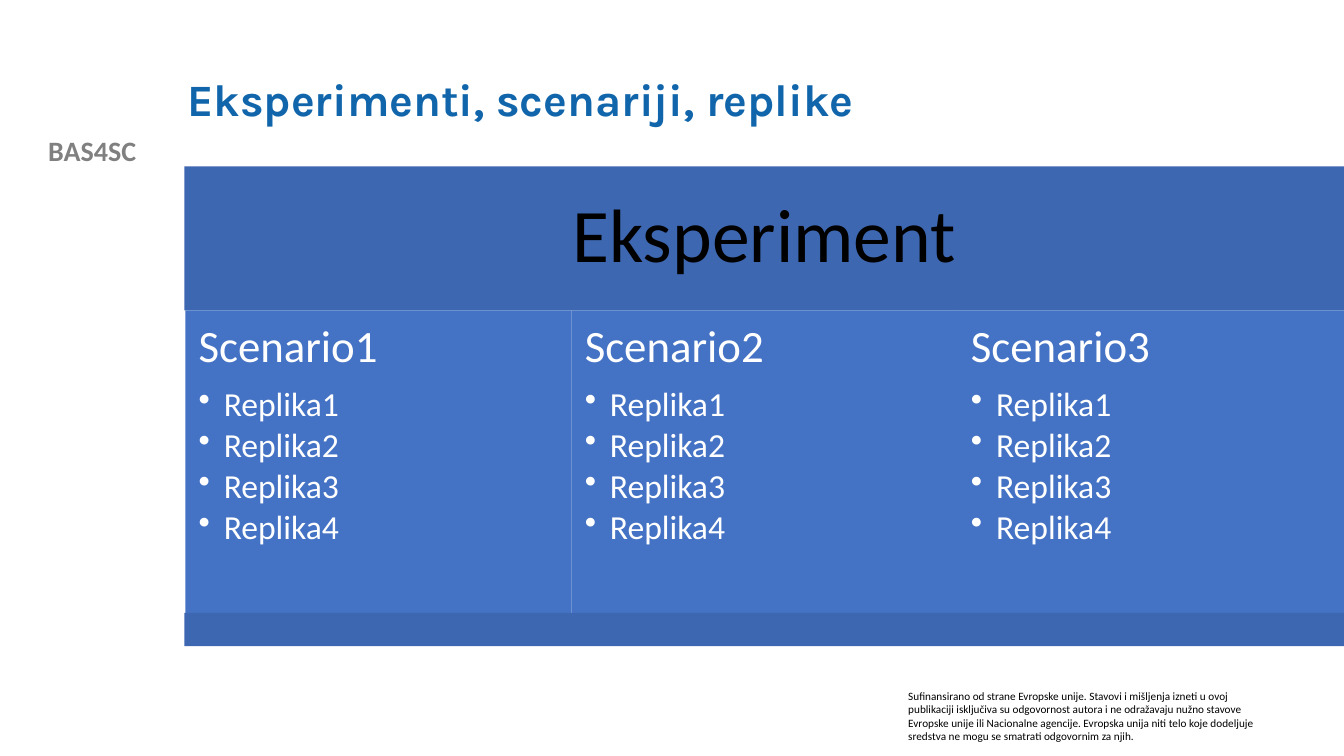
import pptx
import pptx.util
import pptx.dml.color
import pptx.enum.shapes
import pptx.enum.text
import pptx.oxml.ns
import pptx.oxml.xmlchemy
from pptx.util import Inches, Pt

TITLE = "Eksperimenti, scenariji, replike"
PROJECT = "BAS4SC"
FUNDING = ("Sufinansirano od strane Evropske unije. Stavovi i mišljenja izneti u ovoj "
           "publikaciji isključiva su odgovornost autora i ne odražavaju nužno stavove "
           "Evropske unije ili Nacionalne agencije. Evropska unija niti telo koje dodeljuje "
           "sredstva ne mogu se smatrati odgovornim za njih.")
EXPERIMENT = "Eksperiment"
REPLICAS = ["Replika1", "Replika2", "Replika3", "Replika4"]
SCENARIOS = {name: REPLICAS for name in ("Scenario1", "Scenario2", "Scenario3")}

THEME = {
    "body": "Calibri", "heading": "Karla",
    "title": "1065AB", "project": "808080", "dark": "000000", "light": "FFFFFF",
    "band": "3E67B2", "card": "4472C4",
    "title_pt": 32, "project_pt": 20, "funding_pt": 8,
    "experiment_pt": 54, "scenario_pt": 32, "replica_pt": 24,
}
ALIGN = pptx.enum.text.PP_ALIGN
ANCHOR = pptx.enum.text.MSO_ANCHOR

# Diagram grid
LEFT, TOP, WIDTH = 1.83, 1.65, 11.5
HEADER_H, CARD_H, FOOTER_H = 1.43, 3, 0.33
CARD_LEFT, CARD_W = 1.84, 3.83


def rgb(name):
    return pptx.dml.color.RGBColor.from_string(THEME[name])


def style(p, size, color, font="body", bold=False, align=ALIGN.LEFT, spacing=None, after=0):
    p.alignment = align
    p.line_spacing = spacing
    p.space_after = Pt(after)
    for r in p.runs:
        r.font.name = THEME[font]
        r.font.size = Pt(THEME[size])
        r.font.bold = bold
        r.font.color.rgb = rgb(color)


def set_frame(s, inset, anchor):
    tf = s.text_frame
    tf.word_wrap = True
    tf.vertical_anchor = anchor
    tf.margin_left = tf.margin_right = Inches(inset[0])
    tf.margin_top = tf.margin_bottom = Inches(inset[1])
    return tf


def add_label(slide, box, text, size, color, anchor=ANCHOR.TOP, **options):
    s = slide.shapes.add_textbox(*map(Inches, box))
    tf = set_frame(s, (0.1, 0.05), anchor)
    tf.text = text
    style(tf.paragraphs[0], size, color, **options)


def add_block(slide, box, fill):
    s = slide.shapes.add_shape(pptx.enum.shapes.MSO_SHAPE.RECTANGLE, *map(Inches, box))
    s.shadow.inherit = False
    s.fill.solid()
    s.fill.fore_color.rgb = rgb(fill)
    s.line.fill.background()
    return s


def add_bullet(p):
    pPr = p._p.get_or_add_pPr()
    pPr.set("marL", str(Inches(0.25)))
    pPr.set("indent", str(Inches(-0.25)))
    bullet = pptx.oxml.xmlchemy.OxmlElement("a:buChar")
    bullet.set("char", "•")
    pPr.append(bullet)


def add_scenario(slide, box, name, replicas):
    tf = set_frame(add_block(slide, box, "card"), (0.13, 0.13), ANCHOR.TOP)
    tf.text = name
    style(tf.paragraphs[0], "scenario_pt", "light", spacing=0.9, after=11.2)
    for replica in replicas:
        p = tf.add_paragraph()
        p.text = replica
        p.level = 1
        add_bullet(p)
        style(p, "replica_pt", "light", spacing=0.9, after=3.4)


def main():
    prs = pptx.Presentation()
    prs.slide_width, prs.slide_height = Inches(13.33), Inches(7.5)
    slide = prs.slides.add_slide(prs.slide_layouts[6])

    # Project label, funding statement and title
    add_label(slide, (0, 1.28, 1.83, 0.43), PROJECT, "project_pt", "project",
              bold=True, align=ALIGN.CENTER)
    add_label(slide, (8.91, 6.79, 3.74, 0.64), FUNDING, "funding_pt", "dark")
    add_label(slide, (1.76, 0.4, 10.66, 1.22), TITLE, "title_pt", "title",
              anchor=ANCHOR.MIDDLE, font="heading", bold=True, spacing=0.9)

    # Experiment band
    header = add_block(slide, (LEFT, TOP, WIDTH, HEADER_H), "band")
    tf = set_frame(header, (0.23, 0.23), ANCHOR.MIDDLE)
    tf.text = EXPERIMENT
    style(tf.paragraphs[0], "experiment_pt", "dark", align=ALIGN.CENTER, spacing=0.9)

    # Scenario cards
    card_top = TOP + HEADER_H
    for i, (name, replicas) in enumerate(SCENARIOS.items()):
        add_scenario(slide, (CARD_LEFT + i * CARD_W, card_top, CARD_W, CARD_H), name, replicas)

    # Closing band
    add_block(slide, (LEFT, card_top + CARD_H, WIDTH, FOOTER_H), "band")

    prs.save("out.pptx")


if __name__ == "__main__":
    main()
